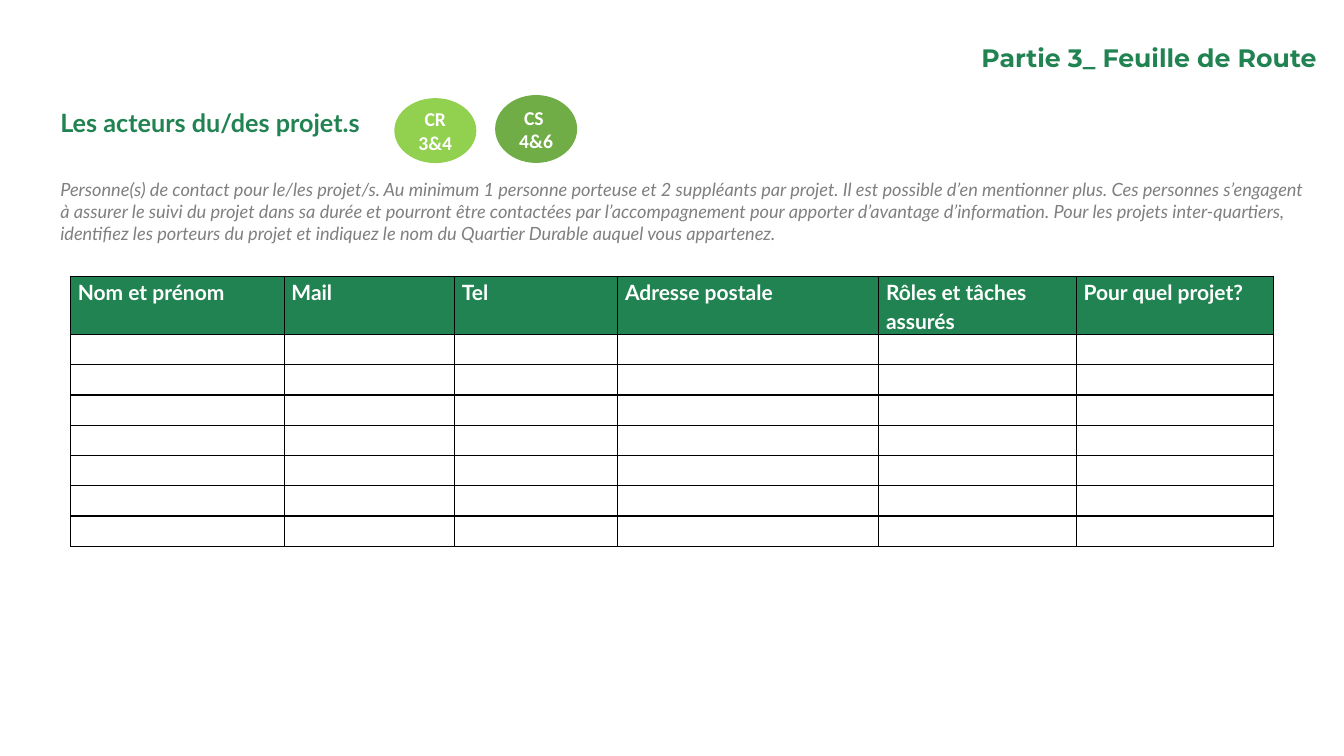
"""Build the project contacts slide with its blank contact table."""
from lxml import etree
from pptx import Presentation
from pptx import util as u
from pptx.dml import color
from pptx.enum import shapes, text
from pptx.oxml import ns

GREEN, GREY, WHITE, BLACK = "218351", "808080", "FFFFFF", "000000"


def paint(fill, value):
    fill.solid()
    fill.fore_color.rgb = color.RGBColor.from_string(value)


def style(frame, face, size, value, bold=True, italic=False):
    for para in frame.paragraphs:
        for span in para.runs:
            font = span.font
            font.name, font.size = face, u.Pt(size)
            font.bold, font.italic = bold, italic
            paint(font.fill, value)


deck = Presentation()
deck.slide_width, deck.slide_height = u.Pt(960), u.Pt(540)
page = deck.slides.add_slide(deck.slide_layouts[6])

intro = (
    "Personne(s) de contact pour le/les projet/s. Au minimum 1 personne porteuse "
    "et 2 suppléants par projet. Il est possible d’en mentionner plus. Ces personnes "
    "s’engagent à assurer le suivi du projet dans sa durée et pourront être contactées "
    "par l’accompagnement pour apporter d’avantage d’information. Pour les projets "
    "inter-quartiers, identifiez les porteurs du projet et indiquez le nom du Quartier "
    "Durable auquel vous appartenez."
)
text_boxes = [
    ("Partie 3_ Feuille de Route", (694, 30.3, 266, 22.3), "Montserrat", 18, GREEN, True),
    ("Les acteurs du/des projet.s", (36, 76.6, 240, 24), "Lato", 18, GREEN, True),
    (intro, (36, 127.4, 907.2, 48), "Lato", 13, GREY, False),
]
for words, place, face, size, value, heading in text_boxes:
    box = page.shapes.add_textbox(*map(u.Pt, place))
    frame = box.text_frame
    frame.word_wrap = True
    frame.margin_top = frame.margin_bottom = 0
    frame.text = words
    style(frame, face, size, value, bold=heading, italic=not heading)

badges = [
    ("CR 3&4", (282.2, 70.6, 57.6, 45.4), "92D050"),
    ("CS \n4&6", (354.2, 68.4, 57.6, 47.5), "70AD47"),
]
for words, place, value in badges:
    badge = page.shapes.add_shape(shapes.MSO_SHAPE.OVAL, *map(u.Pt, place))
    badge.shadow.inherit = False
    paint(badge.fill, value)
    paint(badge.line.fill, value)
    badge.line.width = u.Pt(1)
    frame = badge.text_frame
    frame.word_wrap = True
    frame.vertical_anchor = text.MSO_ANCHOR.MIDDLE
    frame.text = words
    for para in frame.paragraphs:
        para.alignment = text.PP_ALIGN.CENTER
    style(frame, "Calibri", 14, WHITE)

headers = ["Nom et prénom", "Mail", "Tel", "Adresse postale",
           "Rôles et tâches assurés", "Pour quel projet?"]
widths = [152.6, 121.7, 116.6, 186.5, 141.1, 141.1]
heights = [41.4] + [21.6] * 7
table = page.shapes.add_table(
    len(heights), len(headers), u.Pt(50.4), u.Pt(197.5),
    u.Pt(sum(widths)), u.Pt(sum(heights))).table
table.first_row = table.horz_banding = False
for column, width in zip(table.columns, widths):
    column.width = u.Pt(width)
for row_index, (row, height) in enumerate(zip(table.rows, heights)):
    row.height = u.Pt(height)
    for cell, header in zip(row.cells, headers):
        cell.margin_left = cell.margin_right = u.Pt(5.2)
        cell.margin_top = cell.margin_bottom = 0
        for side in ("a:lnL", "a:lnR", "a:lnT", "a:lnB"):
            border = etree.SubElement(
                cell._tc.get_or_add_tcPr(), ns.qn(side), w=str(u.Pt(1)))
            solid = etree.SubElement(border, ns.qn("a:solidFill"))
            etree.SubElement(solid, ns.qn("a:srgbClr"), val=BLACK)
        paint(cell.fill, WHITE if row_index else GREEN)
        para = cell.text_frame.paragraphs[0]
        if row_index:
            etree.SubElement(para._p, ns.qn("a:endParaRPr"), sz="1500")
        else:
            para.text = header
            para.line_spacing = 1.15
            style(cell.text_frame, "Lato", 15, WHITE)

deck.save("out.pptx")
